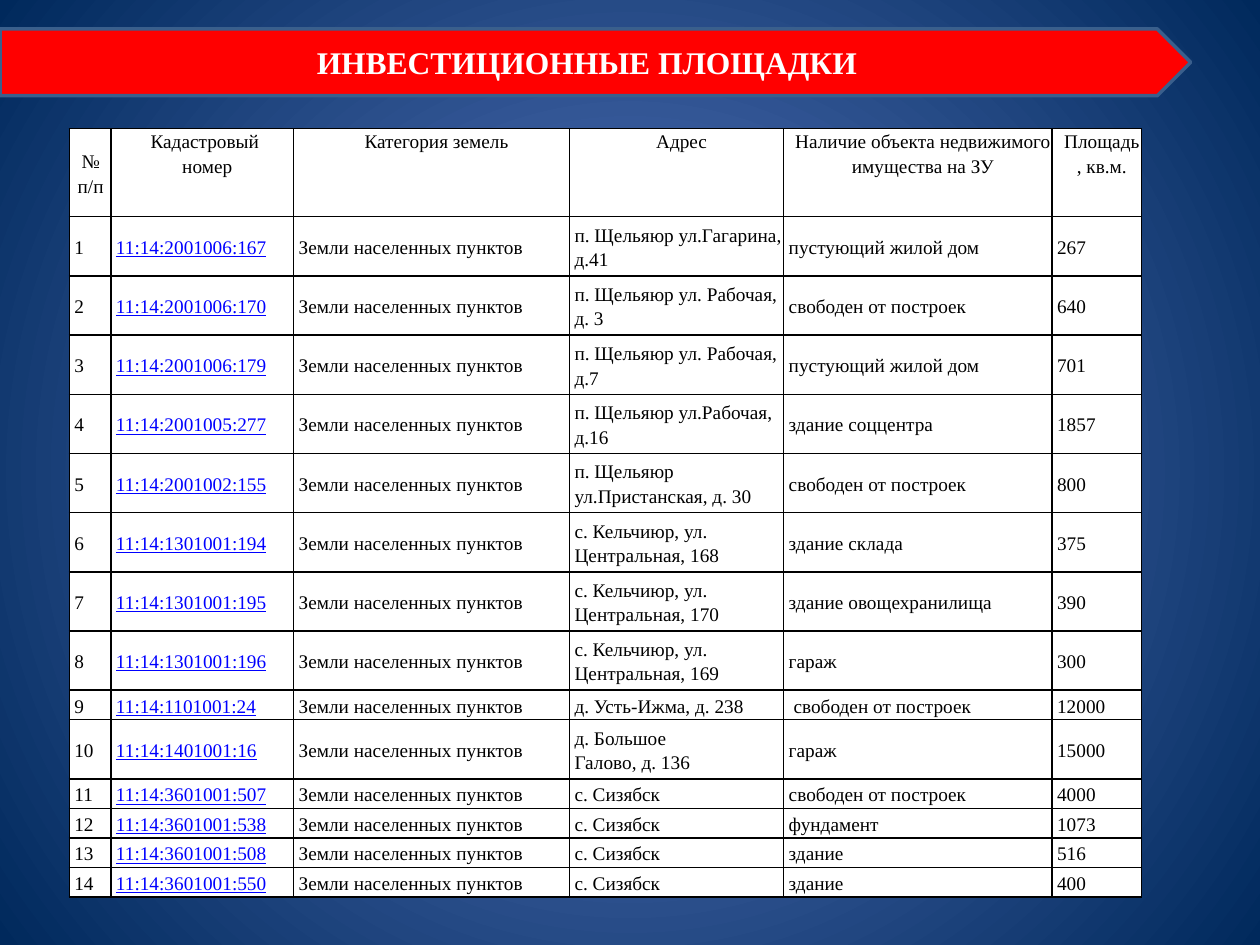
from lxml import etree
from pptx import Presentation
from pptx.dml.color import RGBColor
from pptx.enum import shapes, text
from pptx.oxml import ns
from pptx.util import Inches, Pt

BLACK = RGBColor(0x00, 0x00, 0x00)
WHITE = RGBColor(0xFF, 0xFF, 0xFF)
RED = RGBColor(0xFF, 0x00, 0x00)
LINK_BLUE = RGBColor(0x00, 0x00, 0xFF)
BANNER_EDGE = RGBColor(0x3A, 0x5F, 0x8C)
CENTRE_BLUE = RGBColor(0x5E, 0x7C, 0xC5)
EDGE_BLUE = RGBColor(0x00, 0x29, 0x5C)

FONT = "Times New Roman"
LAND = "Земли населенных пунктов"
COLUMN_WIDTHS = [0.33, 1.45, 2.19, 1.7, 2.13, 0.71]
HEADER_HEIGHT = 0.7
LINE_HEIGHT = 0.235
SINGLE_LINE_SITES = {9, 11, 12, 13, 14}
HEADINGS = ["№ п/п", "Кадастровый \nномер", "Категория земель", "Адрес",
            "Наличие объекта недвижимого имущества на ЗУ", "Площадь, кв.м."]
SITES = [
    ("11:14:2001006:167", "п. Щельяюр ул.Гагарина, д.41", "пустующий жилой дом", "267"),
    ("11:14:2001006:170", "п. Щельяюр ул. Рабочая, д. 3", "свободен от построек", "640"),
    ("11:14:2001006:179", "п. Щельяюр ул. Рабочая, д.7", "пустующий жилой дом", "701"),
    ("11:14:2001005:277", "п. Щельяюр ул.Рабочая, д.16", "здание соццентра", "1857"),
    ("11:14:2001002:155", "п. Щельяюр ул.Пристанская, д. 30", "свободен от построек", "800"),
    ("11:14:1301001:194", "с. Кельчиюр, ул. Центральная, 168", "здание склада", "375"),
    ("11:14:1301001:195", "с. Кельчиюр, ул. Центральная, 170", "здание овощехранилища", "390"),
    ("11:14:1301001:196", "с. Кельчиюр, ул. Центральная, 169", "гараж", "300"),
    ("11:14:1101001:24", "д. Усть-Ижма, д. 238", " свободен от построек", "12000"),
    ("11:14:1401001:16", "д. Большое\nГалово, д. 136", "гараж", "15000"),
    ("11:14:3601001:507", "с. Сизябск", "свободен от построек", "4000"),
    ("11:14:3601001:538", "с. Сизябск", "фундамент", "1073"),
    ("11:14:3601001:508", "с. Сизябск", "здание", "516"),
    ("11:14:3601001:550", "с. Сизябск", "здание", "400"),
]


def write(frame, wording, size=11, color=BLACK, bold=False, underline=False,
          align=text.PP_ALIGN.LEFT, indent=0, spacing=1.0):
    for number, line in enumerate(wording.split("\n")):
        paragraph = frame.add_paragraph() if number else frame.paragraphs[0]
        paragraph.alignment = align
        paragraph.line_spacing = spacing
        paragraph._p.get_or_add_pPr().set("marL", str(Inches(indent)))
        paragraph._p.get_or_add_pPr().set("indent", "0")
        run = paragraph.add_run()
        run.text = line
        run.font.name = FONT
        run.font.size = Pt(size)
        run.font.bold = bold
        run.font.underline = underline
        run.font.color.rgb = color


def paint_background(slide):
    fill = slide.background.fill
    fill.gradient()
    for stop, color, position in zip(fill.gradient_stops, (CENTRE_BLUE, EDGE_BLUE), (0, 1)):
        stop.color.rgb = color
        stop.position = position
    gradient = slide.element.find(".//" + ns.qn("a:gradFill"))
    linear = gradient.find(ns.qn("a:lin"))
    circle = etree.Element(ns.qn("a:path"), {"path": "circle"})
    etree.SubElement(circle, ns.qn("a:fillToRect"), dict.fromkeys("ltrb", "50000"))
    gradient.replace(linear, circle)


def add_banner(slide, left, top, width, height):
    banner = slide.shapes.add_shape(shapes.MSO_SHAPE.PENTAGON, Inches(left), Inches(top),
                                    Inches(width), Inches(height))
    banner.shadow.inherit = False
    banner.fill.solid()
    banner.fill.fore_color.rgb = RED
    banner.line.color.rgb = BANNER_EDGE
    banner.line.width = Pt(2)
    banner.text_frame.vertical_anchor = text.MSO_ANCHOR.MIDDLE
    write(banner.text_frame, "ИНВЕСТИЦИОННЫЕ ПЛОЩАДКИ", size=18, color=WHITE, bold=True,
          align=text.PP_ALIGN.CENTER)


def add_borders(cell):
    properties = cell._tc.get_or_add_tcPr()
    for position, side in enumerate(("a:lnL", "a:lnR", "a:lnT", "a:lnB")):
        border = etree.Element(ns.qn(side), {"w": str(Pt(1))})
        solid = etree.SubElement(border, ns.qn("a:solidFill"))
        etree.SubElement(solid, ns.qn("a:srgbClr"), {"val": str(BLACK)})
        properties.insert(position, border)


def fill_cell(cell, wording, anchor=text.MSO_ANCHOR.MIDDLE, **text_format):
    cell.margin_left = cell.margin_right = cell.margin_top = cell.margin_bottom = 0
    cell.vertical_anchor = anchor
    cell.fill.solid()
    cell.fill.fore_color.rgb = WHITE
    add_borders(cell)
    write(cell.text_frame, wording, spacing=1.15, **text_format)


def add_site_table(slide, left, top, width, height):
    sites = slide.shapes.add_table(len(SITES) + 1, len(HEADINGS), Inches(left), Inches(top),
                                   Inches(width), Inches(height)).table
    for column, column_width in zip(sites.columns, COLUMN_WIDTHS):
        column.width = Inches(column_width)
    sites.rows[0].height = Inches(HEADER_HEIGHT)
    for column, heading in enumerate(HEADINGS):
        fill_cell(sites.cell(0, column), heading, align=text.PP_ALIGN.CENTER,
                  anchor=text.MSO_ANCHOR.TOP if column else text.MSO_ANCHOR.MIDDLE,
                  indent=0.08 if column else 0.01)
    for number, (cadastre, address, building, area) in enumerate(SITES, 1):
        lines = 1 if number in SINGLE_LINE_SITES else 2
        sites.rows[number].height = Inches(lines * LINE_HEIGHT)
        for column, entry in enumerate((str(number), cadastre, LAND, address, building, area)):
            linked = column == 1
            fill_cell(sites.cell(number, column), entry, indent=0.04, underline=linked,
                      color=LINK_BLUE if linked else BLACK)


def main():
    deck = Presentation()
    deck.slide_width = Inches(10)
    deck.slide_height = Inches(7.5)
    slide = deck.slides.add_slide(deck.slide_layouts[6])
    paint_background(slide)
    add_site_table(slide, 0.55, 1.02, 8.52, 6.09)
    add_banner(slide, 0, 0.23, 9.45, 0.53)
    deck.save("out.pptx")


if __name__ == "__main__":
    main()
